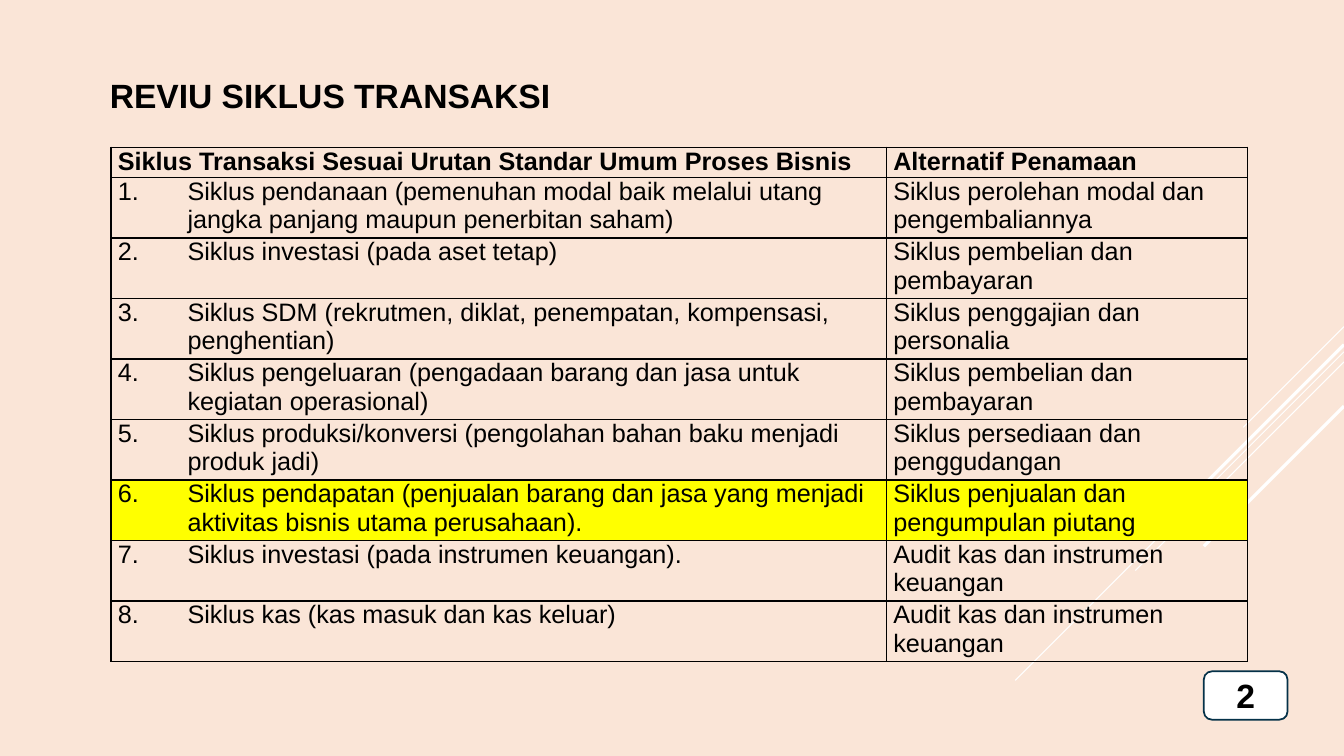
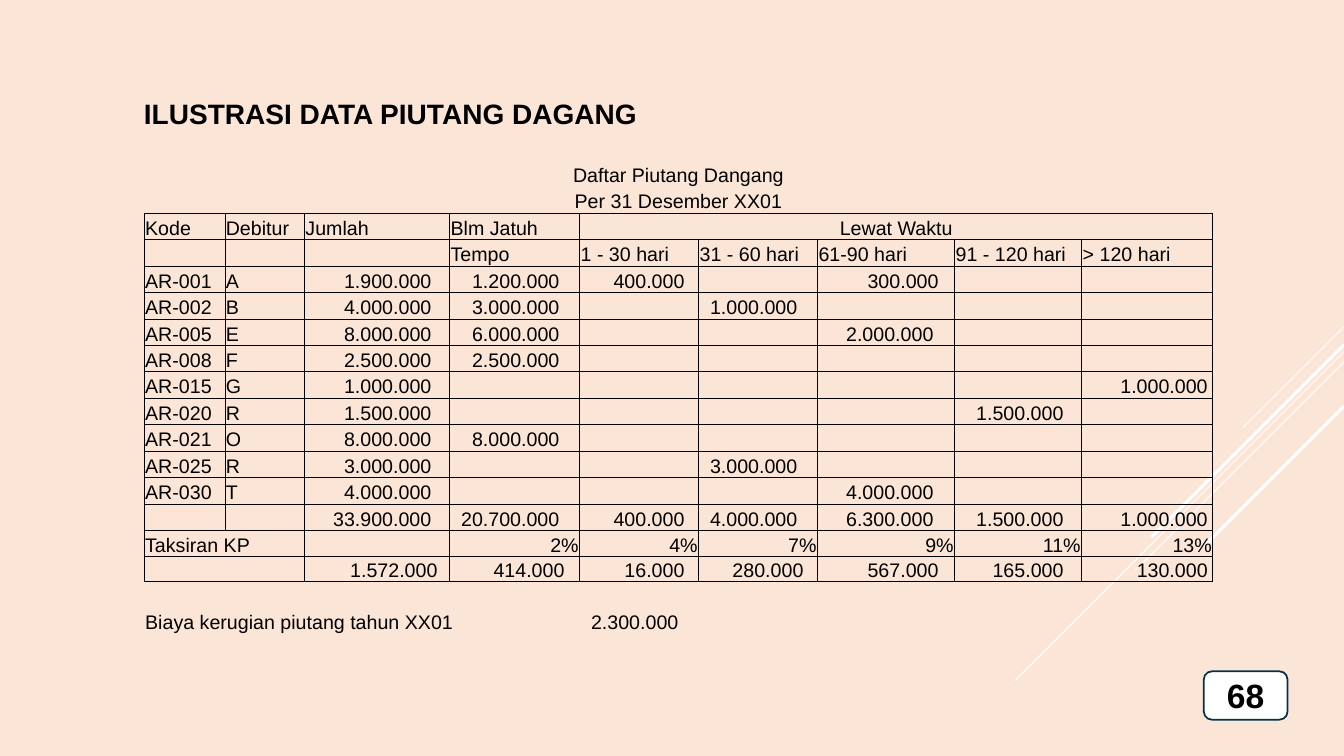
"""Build two slides on transaction cycles and trade receivables."""
import pptx
import pptx.chart.data
import pptx.dml.color
import pptx.enum.shapes
import pptx.enum.text
import pptx.oxml.ns
import pptx.util
from lxml import etree

Inches, Pt = pptx.util.Inches, pptx.util.Pt
RGBColor = pptx.dml.color.RGBColor
ALIGN, ANCHOR = pptx.enum.text.PP_ALIGN, pptx.enum.text.MSO_ANCHOR
SHAPE, CONNECTOR = pptx.enum.shapes.MSO_SHAPE, pptx.enum.shapes.MSO_CONNECTOR
qn = pptx.oxml.ns.qn

FONT = "Arial"
PEACH = RGBColor(0xFA, 0xE5, 0xD7)
WHITE = RGBColor(0xFF, 0xFF, 0xFF)
BLACK = RGBColor(0, 0, 0)
NAVY = RGBColor(0x04, 0x31, 0x48)
YELLOW = RGBColor(0xFF, 0xFF, 0)
NO_STYLE = "{2D5ABB26-0587-4C30-8999-92F81FD0307C}"
RIGHT_EDGE = 13.33

RAYS = [
    (3.24, 1.0, 0.75),
    (3.49, 3.26, 0.75),
    (3.59, 2.07, 0.75),
    (3.42, 1.91, 2.25),
    (4.03, 1.39, 2.25),
]

CYCLE_HEADER = ("Siklus Transaksi Sesuai Urutan Standar Umum Proses Bisnis", "Alternatif Penamaan")
CYCLES = [
    ("Siklus pendanaan (pemenuhan modal baik melalui utang jangka panjang maupun penerbitan saham)",
     "Siklus perolehan modal dan pengembaliannya"),
    ("Siklus investasi (pada aset tetap)", "Siklus pembelian dan pembayaran"),
    ("Siklus SDM (rekrutmen, diklat, penempatan, kompensasi, penghentian)",
     "Siklus penggajian dan personalia"),
    ("Siklus pengeluaran (pengadaan barang dan jasa untuk kegiatan operasional)",
     "Siklus pembelian dan pembayaran"),
    ("Siklus produksi/konversi (pengolahan bahan baku menjadi produk jadi)",
     "Siklus persediaan dan penggudangan"),
    ("Siklus pendapatan (penjualan barang dan jasa yang menjadi aktivitas bisnis utama perusahaan).",
     "Siklus penjualan dan pengumpulan piutang"),
    ("Siklus investasi (pada instrumen keuangan).", "Audit kas dan instrumen keuangan"),
    ("Siklus kas (kas masuk dan kas keluar)", "Audit kas dan instrumen keuangan"),
]
REVENUE_CYCLE = 6
CYCLE_WIDTHS = [7.69, 3.58]

RECEIVABLES = [
    ["Daftar Piutang Dangang"],
    ["Per 31 Desember XX01"],
    ["Kode", "Debitur", "Jumlah", "Blm Jatuh", "Lewat Waktu"],
    ["", "", "", "Tempo", "1 - 30 hari", "31 - 60 hari", "61-90 hari", "91 - 120 hari", "> 120 hari"],
    ["AR-001", "A", "1.900.000", "1.200.000", "400.000", "", "300.000"],
    ["AR-002", "B", "4.000.000", "3.000.000", "", "1.000.000"],
    ["AR-005", "E", "8.000.000", "6.000.000", "", "", "2.000.000"],
    ["AR-008", "F", "2.500.000", "2.500.000"],
    ["AR-015", "G", "1.000.000", "", "", "", "", "", "1.000.000"],
    ["AR-020", "R", "1.500.000", "", "", "", "", "1.500.000"],
    ["AR-021", "O", "8.000.000", "8.000.000"],
    ["AR-025", "R", "3.000.000", "", "", "3.000.000"],
    ["AR-030", "T", "4.000.000", "", "", "", "4.000.000"],
    ["", "", "33.900.000", "20.700.000", "400.000", "4.000.000", "6.300.000", "1.500.000", "1.000.000"],
    ["Taksiran KP", "", "", "2%", "4%", "7%", "9%", "11%", "13%"],
    ["", "", "1.572.000", "414.000", "16.000", "280.000", "567.000", "165.000", "130.000"],
    [],
    ["Biaya kerugian piutang tahun XX01", "", "", "", "2.300.000"],
]
FIRST_DEBTOR, RATE_ROW, ESTIMATE_ROW = 4, 14, 15
SPANS = [(0, 0, 8), (1, 0, 8), (2, 4, 8), (RATE_ROW, 0, 1), (ESTIMATE_ROW, 0, 1), (17, 0, 3)]
RECEIVABLE_WIDTHS = [0.8, 0.79, 1.44, 1.29, 1.18, 1.18, 1.36, 1.26, 1.3]
LONG_INDENTS = [0.01, 0.01, 0.18, 0.2, 0.2, 0.2, 0.21, 0.18, 0.05]
SHORT_INDENTS = [0.01, 0.01, 0.12, 0.15, 0.14, 0.14, 0.16, 0.18, 0.05]


def write(tf, text, size=18, bold=False, align=ALIGN.LEFT):
    p = tf.paragraphs[0]
    p.alignment = align
    if text:
        r = p.add_run()
        r.text = text
        r.font.name, r.font.size, r.font.bold = FONT, Pt(size), bold
        r.font.color.rgb = BLACK
    else:
        etree.SubElement(p._p, qn("a:endParaRPr"), sz=str(size * 100))
    return p


def number(p, start, indent):
    pPr = p._p.get_or_add_pPr()
    pPr.set("marL", str(Inches(indent)))
    pPr.set("indent", str(-Inches(indent)))
    etree.SubElement(pPr, qn("a:buFont"), typeface=FONT)
    etree.SubElement(pPr, qn("a:buAutoNum"), type="arabicPeriod", startAt=str(start))


def style_cell(cell, edges, width, margins, anchor=ANCHOR.TOP, fill=None):
    tcPr = cell._tc.get_or_add_tcPr()
    for side in edges:
        ln = etree.SubElement(tcPr, qn("a:ln" + side), w=str(Pt(width)))
        solid = etree.SubElement(ln, qn("a:solidFill"))
        etree.SubElement(solid, qn("a:srgbClr"), val=str(BLACK))
    if fill is None:
        cell.fill.background()
    else:
        cell.fill.solid()
        cell.fill.fore_color.rgb = fill
    cell.margin_left, cell.margin_top, cell.margin_right, cell.margin_bottom = map(Inches, margins)
    cell.vertical_anchor = anchor


def add_grid(s, left, top, widths, heights):
    frame = s.shapes.add_table(len(heights), len(widths), Inches(left), Inches(top),
                               Inches(sum(widths)), Inches(sum(heights)))
    table = frame.table
    table.first_row = table.horz_banding = False
    table._tbl.tblPr.find(qn("a:tableStyleId")).text = NO_STYLE
    for column, width in zip(table.columns, widths):
        column.width = Inches(width)
    for row, height in zip(table.rows, heights):
        row.height = Inches(height)
    return table


def add_base(prs, page, title, box, size):
    s = prs.slides.add_slide(prs.slide_layouts[6])
    s.background.fill.solid()
    s.background.fill.fore_color.rgb = PEACH
    for top, reach, width in RAYS:
        ray = s.shapes.add_connector(CONNECTOR.STRAIGHT, Inches(RIGHT_EDGE), Inches(top),
                                     Inches(RIGHT_EDGE - reach), Inches(top + reach))
        ray.line.color.rgb = WHITE
        ray.line.width = Pt(width)
        etree.SubElement(ray._element.spPr, qn("a:effectLst"))
    badge = s.shapes.add_shape(SHAPE.ROUNDED_RECTANGLE, Inches(11.94), Inches(6.66),
                               Inches(0.83), Inches(0.48))
    badge.shadow.inherit = False
    badge.fill.solid()
    badge.fill.fore_color.rgb = WHITE
    badge.line.color.rgb = NAVY
    badge.line.width = Pt(1.25)
    badge.text_frame.vertical_anchor = ANCHOR.MIDDLE
    write(badge.text_frame, str(page), size=24, bold=True, align=ALIGN.CENTER)
    heading = s.shapes.add_textbox(*map(Inches, box))
    write(heading.text_frame, title, size=size, bold=True)
    return s


def build_cycles(prs):
    s = add_base(prs, 2, "REVIU SIKLUS TRANSAKSI", (0.99, 0.69, 4.62, 0.5), 24)
    table = add_grid(s, 1.1, 1.46, CYCLE_WIDTHS, [0.3] + [0.6] * len(CYCLES))
    for i, row in enumerate([CYCLE_HEADER] + CYCLES):
        for j, text in enumerate(row):
            cell = table.cell(i, j)
            style_cell(cell, "LRTB", 1, (0.07, 0, 0.07, 0),
                       fill=YELLOW if i == REVENUE_CYCLE else None)
            p = write(cell.text_frame, text, bold=i == 0)
            if i and j == 0:
                number(p, i, 0.69)


def receivable_edges(i, j):
    if i < 2 or i > ESTIMATE_ROW:
        return ""
    if j < 2 and i >= RATE_ROW:
        return "LRT" if i == RATE_ROW else "LRB"
    return "LRTB"


def receivable_format(i, j, text):
    if i < 2 or (i == 2 and j == 4):
        return ALIGN.CENTER, 0.01
    if i < FIRST_DEBTOR or j < 2:
        return ALIGN.LEFT, 0.01
    if i == RATE_ROW:
        return ALIGN.RIGHT, 0.01
    short = i == ESTIMATE_ROW or len(text) < 8
    return ALIGN.RIGHT, (SHORT_INDENTS if short else LONG_INDENTS)[j]


def build_receivables(prs):
    s = add_base(prs, 68, "ILUSTRASI DATA PIUTANG DAGANG", (1.33, 0.91, 5.14, 0.44), 20)
    heights = [4.72 / len(RECEIVABLES)] * len(RECEIVABLES)
    heights[ESTIMATE_ROW] = 0.23
    table = add_grid(s, 1.43, 1.59, RECEIVABLE_WIDTHS, heights)
    for i, first, last in SPANS:
        table.cell(i, first).merge(table.cell(i, last))
    for i, row in enumerate(RECEIVABLES):
        for j in range(len(RECEIVABLE_WIDTHS)):
            text = row[j] if j < len(row) else ""
            align, indent = receivable_format(i, j, text)
            cell = table.cell(i, j)
            style_cell(cell, receivable_edges(i, j), 0.5, (0.01, 0.01, indent, 0), ANCHOR.BOTTOM)
            write(cell.text_frame, text, size=14, align=align)


def main():
    prs = pptx.Presentation()
    prs.slide_width, prs.slide_height = Inches(RIGHT_EDGE), Inches(7.5)
    build_cycles(prs)
    build_receivables(prs)
    prs.save("out.pptx")


if __name__ == "__main__":
    main()
